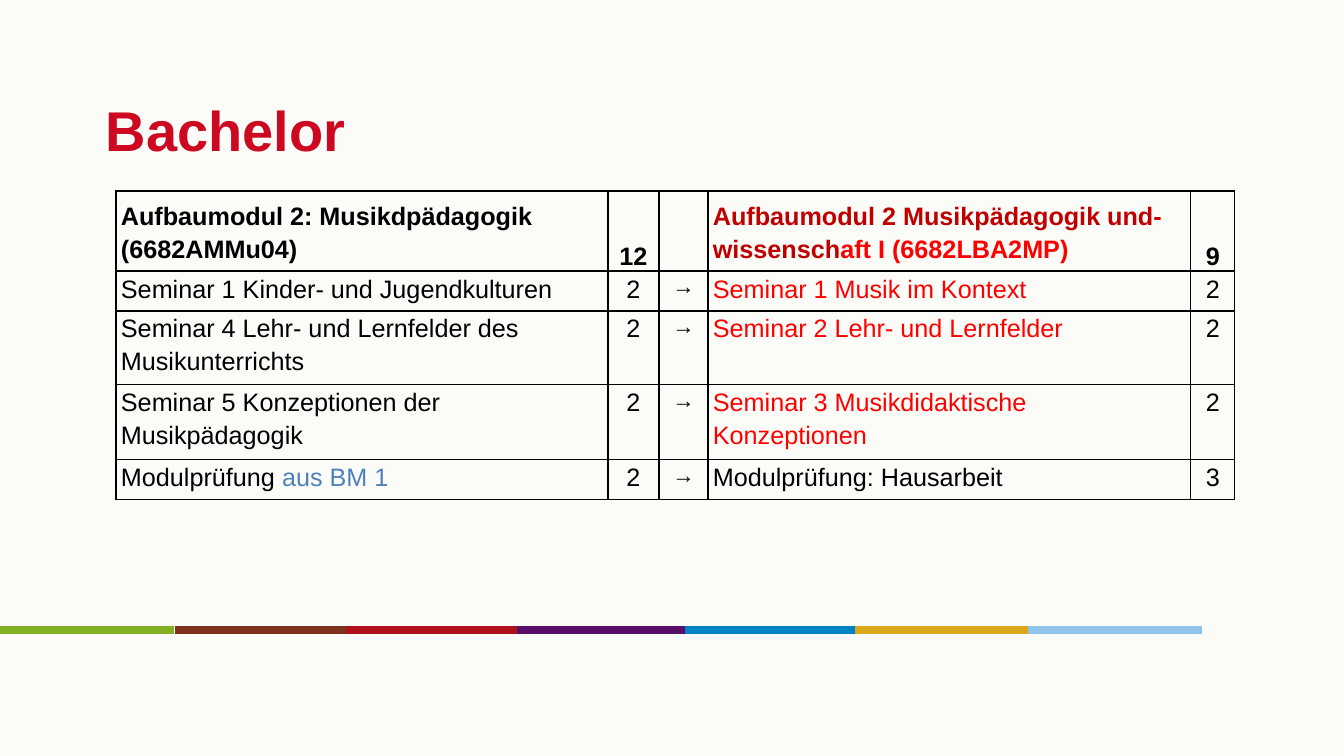
import pptx
import pptx.util
import pptx.dml.color
import pptx.enum.shapes
import pptx.enum.text
from lxml import etree
from pptx.oxml.ns import qn

RGB = pptx.dml.color.RGBColor
ALIGN = pptx.enum.text.PP_ALIGN
ANCHOR = pptx.enum.text.MSO_ANCHOR
Pt = pptx.util.Pt

PAPER = RGB(0xFB, 0xFC, 0xF8)
TITLE = RGB(0xCD, 0x09, 0x21)
BLACK = RGB(0, 0, 0)
DARK = RGB(0xC0, 0, 0)
RED = RGB(0xFF, 0, 0)
BLUE = RGB(0x4F, 0x81, 0xBD)
BARS = [
    (0, RGB(0x83, 0xAF, 0x23)),
    (175, RGB(0x7D, 0x32, 0x1D)),
    (346, RGB(0xAF, 0x11, 0x1D)),
    (517, RGB(0x59, 0x0F, 0x68)),
    (685, RGB(0x00, 0x82, 0xC6)),
    (855, RGB(0xDB, 0xA6, 0x19)),
    (1028, RGB(0x91, 0xC4, 0xEA)),
]
FONT = "Arial"
COLS = [492, 51, 49, 483, 44]
ROWS = [80, 40, 74, 75, 40]
ARROW = "→"

# Each cell is a list of (text, colour) runs.
CELLS = [
    [[("Aufbaumodul 2: Musikdpädagogik (6682AMMu04)", BLACK)], [("12", BLACK)], [],
     [("Aufbaumodul 2 Musikpädagogik und- wissensch", DARK),
      ("aft I (6682LBA2MP)", RED)], [("9", BLACK)]],
    [[("Seminar 1 Kinder- und Jugendkulturen", BLACK)], [("2", BLACK)], [(ARROW, BLACK)],
     [("Seminar 1 Musik im Kontext", RED)], [("2", BLACK)]],
    [[("Seminar 4 Lehr- und Lernfelder des Musikunterrichts", BLACK)], [("2", BLACK)],
     [(ARROW, BLACK)], [("Seminar 2 Lehr- und Lernfelder", RED)], [("2", BLACK)]],
    [[("Seminar 5 Konzeptionen der Musikpädagogik", BLACK)], [("2", BLACK)],
     [(ARROW, BLACK)], [("Seminar 3 Musikdidaktische Konzeptionen", RED)], [("2", BLACK)]],
    [[("Modulprüfung", BLACK), (" aus BM 1", BLUE)], [("2", BLACK)], [(ARROW, BLACK)],
     [("Modulprüfung: Hausarbeit", BLACK)], [("3", BLACK)]],
]


def px(count):
    return pptx.util.Emu(round(count * 914400 / 100.8))


def add_bars(slide, left, top, width):
    """Draw the row of coloured strokes, each as wide as given."""
    for start, color in BARS:
        x = left + start
        bar = slide.shapes.add_connector(
            pptx.enum.shapes.MSO_CONNECTOR.STRAIGHT,
            px(x), px(top), px(x + width), px(top))
        bar.line.color.rgb = color
        bar.line.width = Pt(5.5)
        etree.SubElement(bar.line._get_or_add_ln().getparent(), qn("a:effectLst"))


def add_title(slide, left, top, width, height):
    box = slide.shapes.add_textbox(px(left), px(top), px(width), px(height))
    frame = box.text_frame
    frame.word_wrap = True
    frame.vertical_anchor = ANCHOR.MIDDLE
    frame.margin_left = frame.margin_right = px(5)
    frame.margin_top = frame.margin_bottom = px(5)
    para = frame.paragraphs[0]
    para.text = "Bachelor"
    para.font.name = FONT
    para.font.size = Pt(40)
    para.font.bold = True
    para.font.color.rgb = TITLE


def add_border(cell):
    props = cell._tc.get_or_add_tcPr()
    for side in ("lnL", "lnR", "lnT", "lnB"):
        line = etree.SubElement(props, qn("a:" + side), w=str(Pt(1)))
        fill = etree.SubElement(line, qn("a:solidFill"))
        etree.SubElement(fill, qn("a:srgbClr"), val=str(BLACK))


def fill_cell(cell, runs, row, col):
    add_border(cell)
    cell.fill.background()
    cell.margin_left = cell.margin_right = px(5)
    cell.margin_top = cell.margin_bottom = 0
    wide = col in (0, 3)
    if row == 0:
        cell.vertical_anchor = ANCHOR.MIDDLE if wide else ANCHOR.BOTTOM
    else:
        cell.vertical_anchor = ANCHOR.TOP
    para = cell.text_frame.paragraphs[0]
    para.alignment = ALIGN.LEFT if wide else ALIGN.CENTER
    para.line_spacing = 1.15
    para.font.name = FONT
    para.font.size = Pt(16 if col == 2 else 18)
    para.font.bold = row == 0
    for text, color in runs:
        run = para.add_run()
        run.text = text
        run.font.color.rgb = color


def add_plan(slide, left, top):
    """Place the table that maps old modules to new ones."""
    table = slide.shapes.add_table(
        len(ROWS), len(COLS), px(left), px(top), px(sum(COLS)), px(sum(ROWS))).table
    table.first_row = False
    table.horz_banding = False
    for column, width in zip(table.columns, COLS):
        column.width = px(width)
    for row, height in enumerate(ROWS):
        table.rows[row].height = px(height)
        for col, runs in enumerate(CELLS[row]):
            fill_cell(table.cell(row, col), runs, row, col)


def main():
    deck = pptx.Presentation()
    deck.slide_width = px(1344)
    deck.slide_height = px(756)
    slide = deck.slides.add_slide(deck.slide_layouts[6])
    slide.background.fill.solid()
    slide.background.fill.fore_color.rgb = PAPER
    add_bars(slide, 0, 630, 174)
    add_title(slide, 101, 66, 1142, 126)
    add_plan(slide, 116, 191)
    deck.save("out.pptx")


if __name__ == "__main__":
    main()
